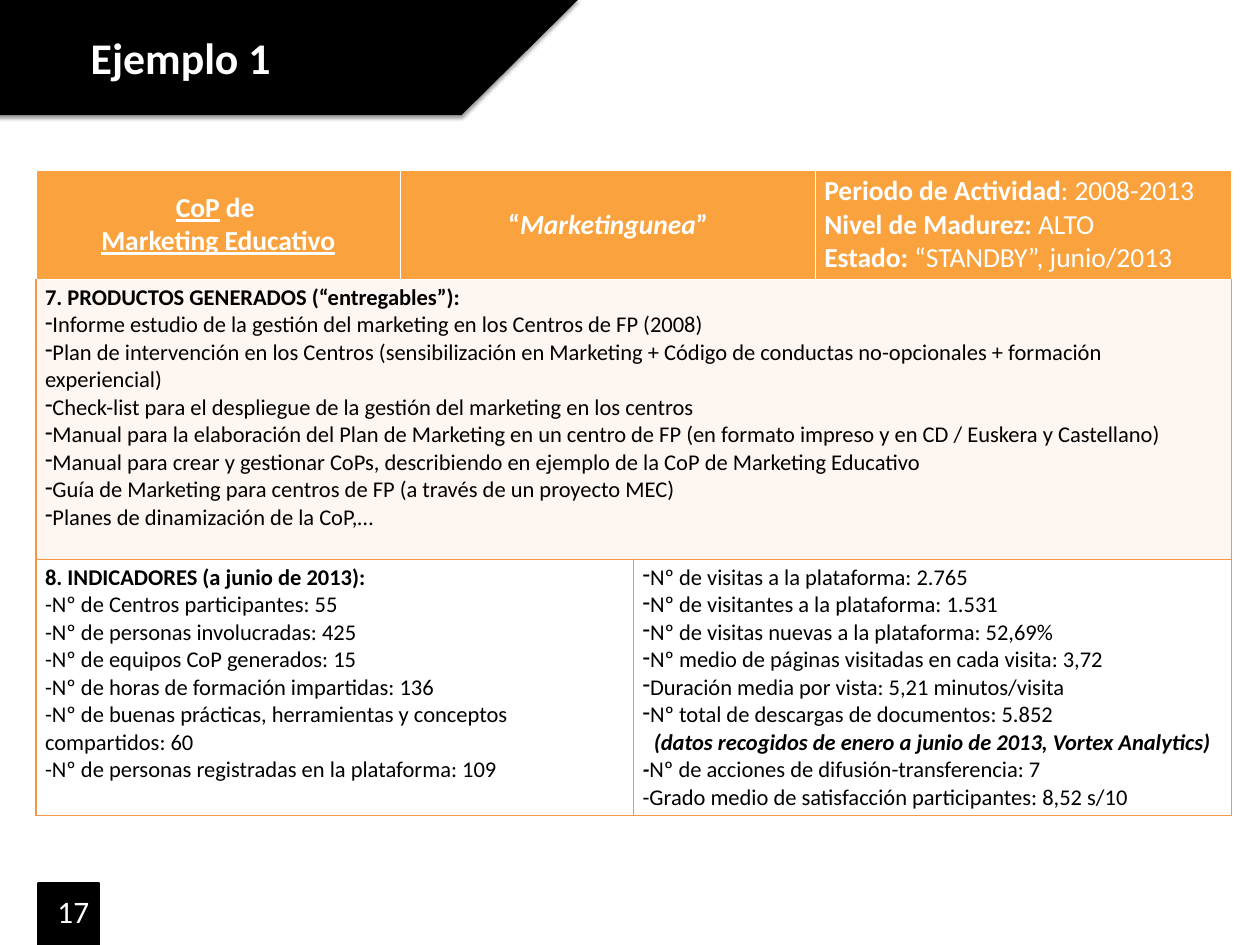
import lxml.etree
import pptx
import pptx.dml.color
import pptx.enum.shapes
import pptx.enum.text
import pptx.oxml.ns
import pptx.util
from pptx.util import Inches

COLORS = {"black": "000000", "white": "FFFFFF", "orange": "FAA23E",
          "peach": "FCD5B5", "rule": "F79646"}
CENTER = pptx.enum.text.PP_ALIGN.CENTER
MIDDLE = pptx.enum.text.MSO_ANCHOR.MIDDLE
SHAPES = pptx.enum.shapes.MSO_SHAPE
qn = pptx.oxml.ns.qn


def rgb(name):
    return pptx.dml.color.RGBColor.from_string(COLORS[name])


def add_xml(parent, tag, **attributes):
    return lxml.etree.SubElement(parent, qn(tag), attributes)


class SlideBuilder:
    font_name = "Calibri"

    def __init__(self, slide):
        self.slide = slide

    def paragraph(self, frame, runs, size, color, bullet=False, align=None):
        """Write a paragraph; runs are (text, marks), marks being letters of "biu"."""
        is_first = len(frame.paragraphs) == 1 and not frame.paragraphs[0].runs
        paragraph = frame.paragraphs[0] if is_first else frame.add_paragraph()
        if bullet:
            properties = paragraph._p.get_or_add_pPr()
            properties.set("marL", "0")
            properties.set("indent", "0")
            add_xml(properties, "a:buFontTx")
            add_xml(properties, "a:buChar", char="-")
        if align is not None:
            paragraph.alignment = align
        font = paragraph.font
        font.name, font.size = self.font_name, pptx.util.Pt(size)
        font.color.rgb = rgb(color)
        shared = set.intersection(*(set(marks) for _, marks in runs))
        self.emphasize(font, shared)
        for text, marks in runs:
            run = paragraph.add_run()
            run.text = text
            self.emphasize(run.font, set(marks) - shared)

    def emphasize(self, font, marks):
        for mark, attribute in zip("biu", ("bold", "italic", "underline")):
            if mark in marks:
                setattr(font, attribute, True)

    def shape(self, kind, left, top, width, height, line_width=None):
        shape = self.slide.shapes.add_shape(
            kind, Inches(left), Inches(top), Inches(width), Inches(height))
        shape.shadow.inherit = False
        shape.fill.solid()
        shape.fill.fore_color.rgb = rgb("black")
        if line_width is None:
            shape.line.fill.background()
        else:
            shape.line.color.rgb = rgb("black")
            shape.line.width = pptx.util.Pt(line_width)
        return shape

    def drop_shadow(self, shape, blur, distance, opacity):
        """Cast a black shadow straight down; blur and distance in points."""
        effects = shape._element.spPr.find(qn("a:effectLst"))
        shadow = add_xml(effects, "a:outerShdw", blurRad=str(pptx.util.Pt(blur)),
                         dist=str(pptx.util.Pt(distance)), dir="5400000", rotWithShape="0")
        tint = add_xml(shadow, "a:srgbClr", val=COLORS["black"])
        add_xml(tint, "a:alpha", val=str(opacity * 1000))

    def text(self, left, top, width, height, text, size, marks=""):
        box = self.slide.shapes.add_textbox(
            Inches(left), Inches(top), Inches(width), Inches(height))
        box.text_frame.word_wrap = True
        self.paragraph(box.text_frame, [(text, marks)], size, "white")

    def table(self, left, top, widths, heights):
        table = self.slide.shapes.add_table(
            len(heights), len(widths), Inches(left), Inches(top),
            Inches(sum(widths)), Inches(sum(heights))).table
        table.first_row = table.horz_banding = False
        for column, width in zip(table.columns, widths):
            column.width = Inches(width)
        for row, height in zip(table.rows, heights):
            row.height = Inches(height)
        return table

    def cell(self, table, row, first, last, paragraphs, size, color, border,
             fill=None, opacity=100, top_border=None, anchor=None):
        """Fill a cell that spans the columns first to last."""
        cell = table.cell(row, first)
        if last > first:
            cell.merge(table.cell(row, last))
        if anchor is not None:
            cell.vertical_anchor = anchor
        for paragraph in paragraphs:
            self.paragraph(cell.text_frame, size=size, color=color, **paragraph)
        for column in range(first, last + 1):
            part = table.cell(row, column)
            if fill:
                part.fill.solid()
                part.fill.fore_color.rgb = rgb(fill)
                if opacity < 100:
                    tint = part._tc.tcPr.find(qn("a:solidFill"))[0]
                    add_xml(tint, "a:alpha", val=str(opacity * 1000))
            else:
                part.fill.background()
            self.borders(part, border, top_border or border)

    def borders(self, cell, color, top_color):
        properties = cell._tc.get_or_add_tcPr()
        for index, side in enumerate("LRTB"):
            line = add_xml(properties, "a:ln" + side, w=str(pptx.util.Pt(1)))
            paint = add_xml(line, "a:solidFill")
            add_xml(paint, "a:srgbClr", val=COLORS[top_color if side == "T" else color])
            properties.insert(index, line)


def line(*runs, **options):
    return {"runs": runs, **options}


def plain(*texts, **options):
    return [line((text, ""), **options) for text in texts]


def main():
    deck = pptx.Presentation()
    deck.slide_width, deck.slide_height = Inches(14), Inches(10.5)
    builder = SlideBuilder(deck.slides.add_slide(deck.slide_layouts[6]))

    builder.shape(SHAPES.RECTANGLE, 0.43, 9.81, 0.67, 0.69, line_width=2)

    header = [
        [line(("CoP", "bu"), (" de ", "b"), align=CENTER),
         line(("Marketing Educativo", "bu"), align=CENTER)],
        [line(("“", "b"), ("Marketingunea", "bi"), ("”", "b"), align=CENTER)],
        [line(("Periodo de Actividad", "b"), (": 2008-2013", "")),
         line(("Nivel de Madurez: ", "b"), ("ALTO", "")),
         line(("Estado: ", "b"), ("“STANDBY”, junio/2013", ""))],
    ]
    products = [line(("7. PRODUCTOS GENERADOS (“entregables”):", "b"))] + plain(
        "Informe estudio de la gestión del marketing en los Centros de FP (2008)",
        "Plan de intervención en los Centros (sensibilización en Marketing + Código de "
        "conductas no-opcionales + formación experiencial)",
        "Check-list para el despliegue de la gestión del marketing en los centros",
        "Manual para la elaboración del Plan de Marketing en un centro de FP "
        "(en formato impreso y en CD / Euskera y Castellano)",
        "Manual para crear y gestionar CoPs, describiendo en ejemplo de la CoP de "
        "Marketing Educativo",
        "Guía de Marketing para centros de FP (a través de un proyecto MEC)",
        "Planes de dinamización de la CoP,…", bullet=True)
    participation = [line(("8. INDICADORES (a junio de 2013):", "b"))] + plain(
        "-Nº de Centros participantes: 55",
        "-Nº de personas involucradas: 425",
        "-Nº de equipos CoP generados: 15",
        "-Nº de horas de formación impartidas: 136",
        "-Nº de buenas prácticas, herramientas y conceptos compartidos: 60",
        "-Nº de personas registradas en la plataforma: 109")
    platform = plain(
        "Nº de visitas a la plataforma: 2.765",
        "Nº de visitantes a la plataforma: 1.531",
        "Nº de visitas nuevas a la plataforma: 52,69%",
        "Nº medio de páginas visitadas en cada visita: 3,72",
        "Duración media por vista: 5,21 minutos/visita",
        "Nº total de descargas de documentos: 5.852", bullet=True) + [
        line(("(datos recogidos de enero a junio de 2013, Vortex Analytics)", "bi"),
             align=CENTER),
        line(("-", "bi"), ("Nº de acciones de difusión-transferencia: 7", "")),
        *plain("-Grado medio de satisfacción participantes: 8,52 s/10")]

    table = builder.table(0.4, 1.89, [4.05, 2.59, 2.02, 4.62], [1.2, 3.11, 2.8])
    for (first, last), paragraphs, anchor in zip(
            [(0, 0), (1, 2), (3, 3)], header, [MIDDLE, MIDDLE, None]):
        builder.cell(table, 0, first, last, paragraphs, 22, "white", "white",
                     fill="orange", anchor=anchor)
    builder.cell(table, 1, 0, 3, products, 18, "black", "rule",
                 fill="peach", opacity=20, top_border="white")
    for first, paragraphs in ((0, participation), (2, platform)):
        builder.cell(table, 2, first, first + 1, paragraphs, 18, "black", "rule")

    banner = builder.shape(SHAPES.PARALLELOGRAM, -1.8, -0.01, 8.23, 1.29)
    banner.adjustments[0] = 1.01
    builder.drop_shadow(banner, 3.1, 1.6, 38)
    builder.text(0.91, 0.29, 5.2, 0.69, "Ejemplo 1", 35, "b")
    builder.text(0.54, 9.87, 3.27, 0.56, "17", 25)
    deck.save("out.pptx")


if __name__ == "__main__":
    main()
